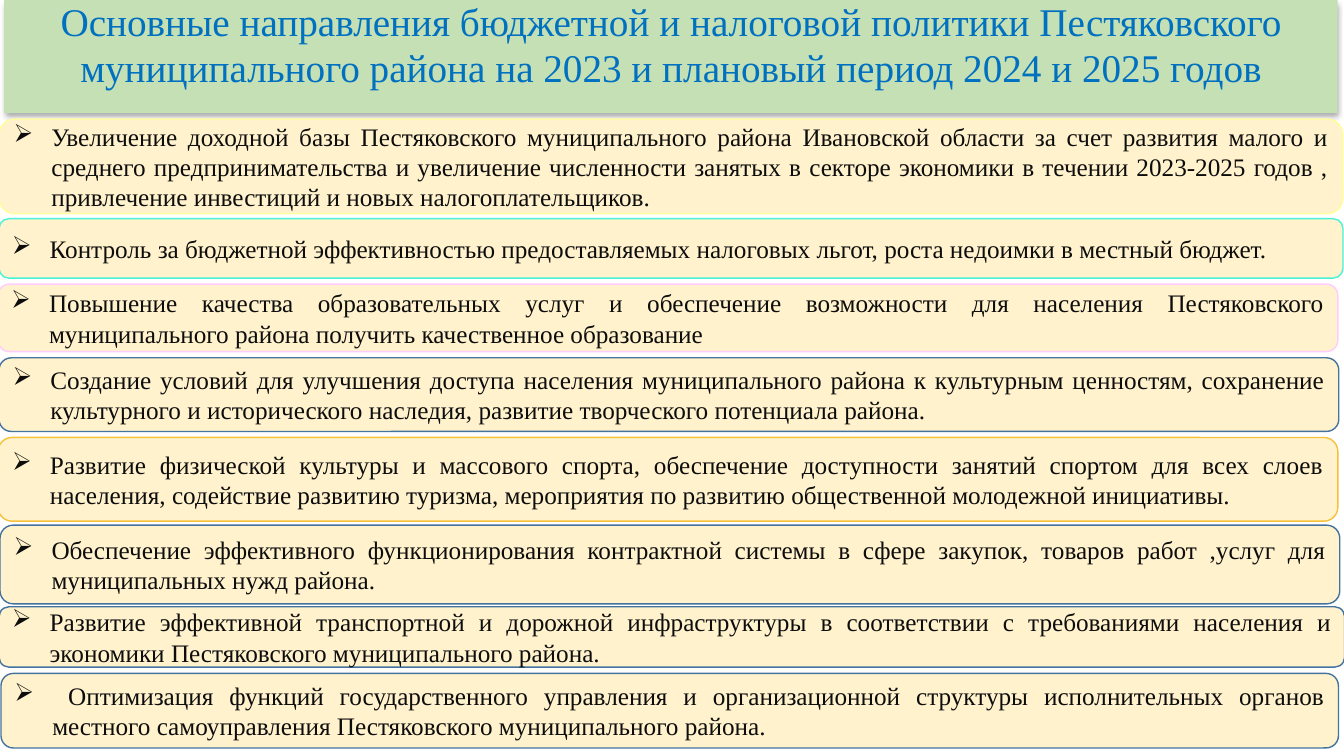
import pptx
import pptx.dml.color
import pptx.enum.shapes
import pptx.enum.text
import pptx.oxml
import pptx.util
from dataclasses import dataclass

Pt = pptx.util.Pt
Kind = pptx.enum.shapes.MSO_SHAPE
Align = pptx.enum.text.PP_ALIGN
Anchor = pptx.enum.text.MSO_ANCHOR
NS = 'xmlns:a="http://schemas.openxmlformats.org/drawingml/2006/main"'


@dataclass
class Theme:
    font: str = "Times New Roman"
    head_size: float = 28
    body_size: float = 18
    head_fill: str = "C5E0B4"
    head_ink: str = "0070C0"
    body_fill: str = "FFF2CC"
    body_ink: str = "0D0D0D"
    yellow: str = "FFFF99"
    aqua: str = "49F1D5"
    pink: str = "FFCCFF"
    blue: str = "43739E"
    gold: str = "F7C139"
    shade: str = "000000"


def color(code):
    return pptx.dml.color.RGBColor.from_string(code)


class Deck:
    def __init__(self, theme, slide):
        self.theme = theme
        self.slide = slide

    def panel(self, kind, box, fill, line=None):
        shape = self.slide.shapes.add_shape(kind, *(Pt(n) for n in box))
        shape.shadow.inherit = False
        shape.fill.solid()
        shape.fill.fore_color.rgb = color(fill)
        if line:
            shape.line.color.rgb = color(line)
            shape.line.width = Pt(1)
        else:
            shape.line.fill.background()
        return shape

    def label(self, shape, text, size, ink, frame, para):
        """Fill the shape with one formatted paragraph."""
        body = shape.text_frame
        item = body.paragraphs[0]
        run = item.add_run()
        run.text = text
        font = {"name": self.theme.font, "size": Pt(size)}
        for part, style in ((body, frame), (item, para), (run.font, font)):
            for key, value in style.items():
                setattr(part, key, value)
        run.font.color.rgb = color(ink)
        return item

    def title(self, text, box):
        look = self.theme
        shape = self.panel(Kind.RECTANGLE, box, look.head_fill)
        # Soft shadow below the band
        shape.element.spPr.find(pptx.oxml.ns.qn("a:effectLst")).append(
            pptx.oxml.parse_xml(
                f'<a:outerShdw {NS} blurRad="{Pt(3.5)}" dist="{Pt(2.2)}" '
                f'dir="5400000" rotWithShape="0"><a:srgbClr val="{look.shade}">'
                '<a:alpha val="32000"/></a:srgbClr></a:outerShdw>'))
        self.label(shape, text, look.head_size, look.head_ink,
                   {"word_wrap": True, "vertical_anchor": Anchor.TOP,
                    "margin_top": Pt(0)},
                   {"alignment": Align.CENTER, "line_spacing": 0.97})

    def goal(self, text, box, line):
        look = self.theme
        shape = self.panel(Kind.ROUNDED_RECTANGLE, box, look.body_fill, line)
        item = self.label(shape, text, look.body_size, look.body_ink,
                          {"word_wrap": True, "vertical_anchor": Anchor.MIDDLE},
                          {"alignment": Align.JUSTIFY})
        # Arrow bullet with a hanging indent
        props = item._p.get_or_add_pPr()
        props.set("marL", str(Pt(27)))
        props.set("indent", str(Pt(-27)))
        props.append(pptx.oxml.parse_xml(f'<a:buChar {NS} char="➢"/>'))


def main():
    show = pptx.Presentation()
    show.slide_width, show.slide_height = Pt(960), Pt(540)
    look = Theme()
    deck = Deck(look, show.slides.add_slide(show.slide_layouts[6]))

    # Heading band
    deck.title("Основные направления бюджетной и налоговой политики Пестяковского "
               "муниципального района на 2023 и плановый период 2024 и 2025 годов",
               (2.9, 0, 952.6, 80.6))

    # Policy goals: left, top, width, height, outline, text
    goals = [
        (-0.7, 85, 960, 67.7, look.yellow,
         "Увеличение доходной базы Пестяковского муниципального района Ивановской "
         "области за счет развития малого и среднего предпринимательства и увеличение "
         "численности занятых в секторе экономики в течении 2023-2025 годов , "
         "привлечение инвестиций и новых налогоплательщиков."),
        (-0.7, 156.2, 960, 42.5, look.aqua,
         "Контроль за бюджетной эффективностью предоставляемых налоговых льгот, "
         "роста недоимки в местный бюджет."),
        (-1.4, 203, 957, 48.2, look.pink,
         "Повышение качества образовательных услуг и обеспечение возможности для "
         "населения Пестяковского муниципального района получить качественное "
         "образование"),
        (-0.7, 255.6, 957, 52.6, look.blue,
         "Создание условий для улучшения доступа населения муниципального района к "
         "культурным ценностям, сохранение культурного и исторического наследия, "
         "развитие творческого потенциала района."),
        (-1.4, 312.5, 957, 59.8, look.gold,
         "Развитие физической культуры и массового спорта, обеспечение доступности "
         "занятий спортом для всех слоев населения, содействие развитию туризма, "
         "мероприятия по развитию общественной молодежной инициативы."),
        (0, 375.1, 957, 56.2, look.blue,
         "Обеспечение эффективного функционирования контрактной системы в сфере "
         "закупок, товаров работ ,услуг для муниципальных нужд района."),
        (-0.7, 433.4, 961.2, 43.2, look.blue,
         "Развитие эффективной транспортной и дорожной инфраструктуры в соответствии "
         "с требованиями населения и экономики Пестяковского муниципального района."),
        (0.7, 481, 955.4, 53.3, look.blue,
         " Оптимизация функций государственного управления и организационной структуры "
         "исполнительных органов местного самоуправления Пестяковского муниципального "
         "района."),
    ]
    for *box, line, text in goals:
        deck.goal(text, box, line)

    show.save("out.pptx")


if __name__ == "__main__":
    main()
